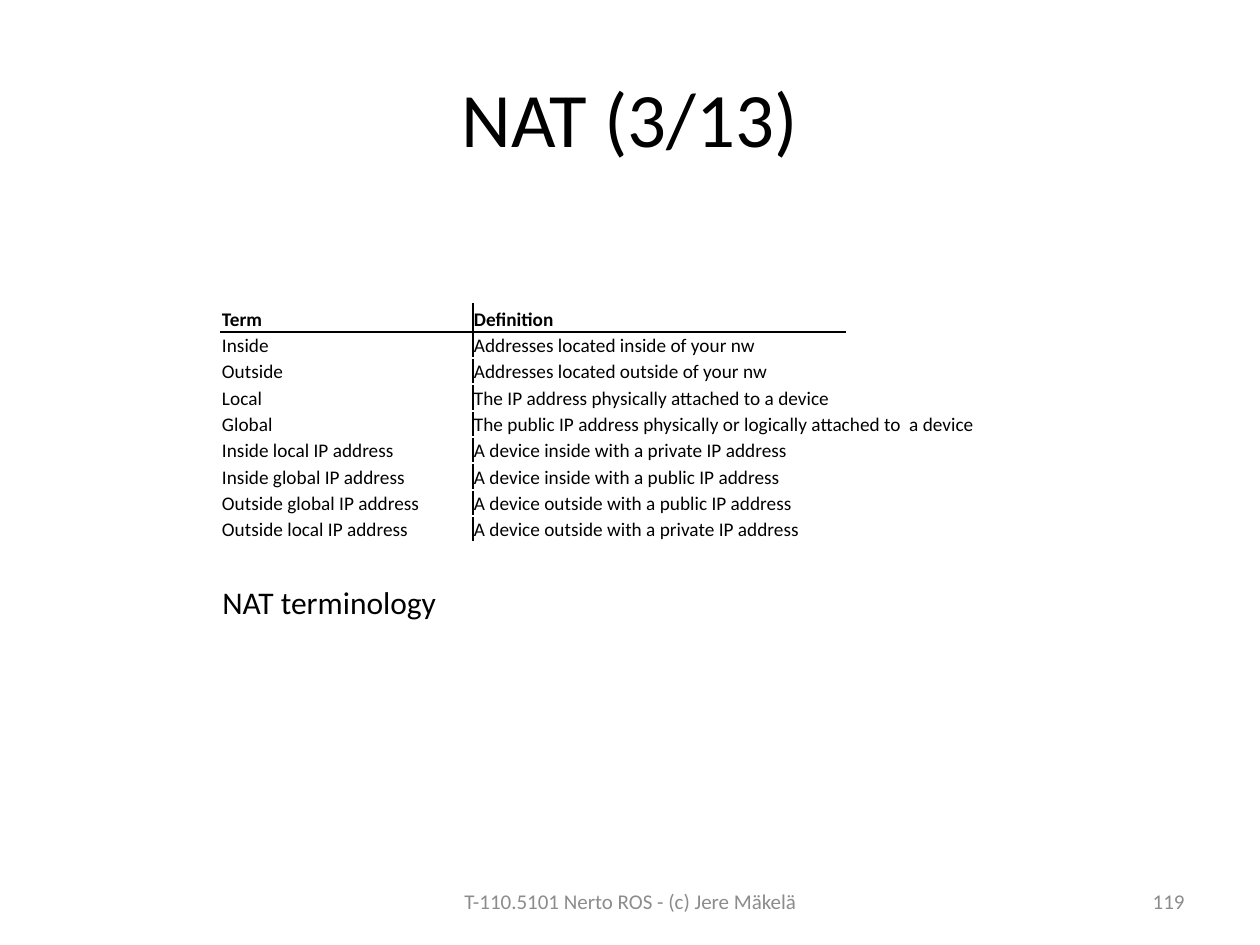
"""Build the NAT terminology slide with its table of terms."""
from dataclasses import dataclass

from lxml import etree
from pptx import Presentation
from pptx.dml.color import RGBColor
from pptx.enum.text import MSO_ANCHOR, MSO_AUTO_SIZE, PP_ALIGN
from pptx.oxml.ns import qn
from pptx.util import Pt

LEFT, CENTER, RIGHT = PP_ALIGN.LEFT, PP_ALIGN.CENTER, PP_ALIGN.RIGHT
TOP, MIDDLE, BOTTOM = MSO_ANCHOR.TOP, MSO_ANCHOR.MIDDLE, MSO_ANCHOR.BOTTOM
FIT_SHAPE = MSO_AUTO_SIZE.SHAPE_TO_FIT_TEXT

EMU_PER_PX = 914400 / 126
TITLE_ONLY = 5


@dataclass(frozen=True)
class Theme:
    font: str = "Calibri"
    ink: str = "000000"
    muted: str = "8C8C8C"
    title_size: int = 44
    caption_size: int = 18
    footer_size: int = 12
    table_size: int = 11
    rule_width: int = 1


@dataclass(frozen=True)
class Box:
    left: int
    top: int
    width: int
    height: int


@dataclass(frozen=True)
class Label:
    text: str
    box: Box
    size: int
    color: str
    align: PP_ALIGN = LEFT
    anchor: MSO_ANCHOR = MIDDLE
    wrap: bool = True


@dataclass(frozen=True)
class Entry:
    term: str
    definition: str
    term_span: int = 1
    definition_span: int = 3


THEME = Theme()
TITLE = Label("NAT (3/13)", Box(63, 38, 1134, 157), THEME.title_size, THEME.ink, CENTER)
LABELS = (
    Label("T-110.5101 Nerto ROS - (c) Jere Mäkelä", Box(431, 876, 399, 50),
          THEME.footer_size, THEME.muted, CENTER),
    Label("119", Box(903, 876, 294, 50), THEME.footer_size, THEME.muted, RIGHT),
    Label("NAT terminology", Box(210, 577, 242, 50), THEME.caption_size, THEME.ink,
          anchor=TOP, wrap=False),
)
ENTRIES = (
    Entry("Term", "Definition", definition_span=1),
    Entry("Inside", "Addresses located inside of your nw"),
    Entry("Outside", "Addresses located outside of your nw"),
    Entry("Local", "The IP address physically attached to a device"),
    Entry("Global", "The public IP address physically or logically attached to  a device",
          definition_span=5),
    Entry("Inside local IP address", "A device inside with a private IP address", 3),
    Entry("Inside global IP address", "A device inside with a public IP address", 3),
    Entry("Outside global IP address", "A device outside with a public IP address", 3),
    Entry("Outside local IP address", "A device outside with a private IP address", 3),
)
COLUMN_WIDTHS = (84, 84, 84, 168, 84, 122, 84, 84)
DEFINITION_COLUMN = 3
RULED_COLUMNS = 6
HEADER_HEIGHT = 28
BODY_HEIGHT = 210
TABLE_BOX = Box(221, 304, sum(COLUMN_WIDTHS), HEADER_HEIGHT + BODY_HEIGHT)


def px(length: int) -> int:
    """Turn pixels into EMU."""
    return round(length * EMU_PER_PX)


def place(shape, box: Box) -> None:
    """Move and size a shape."""
    shape.left, shape.top = px(box.left), px(box.top)
    shape.width, shape.height = px(box.width), px(box.height)


def add_text(paragraph, text: str, size: int, color: str, bold: bool = False) -> None:
    """Add one formatted run to a paragraph."""
    run = paragraph.add_run()
    run.text = text
    run.font.name = THEME.font
    run.font.size = Pt(size)
    run.font.bold = bold
    run.font.color.rgb = RGBColor.from_string(color)


def write_label(shape, label: Label) -> None:
    """Place a text shape and fill in its label."""
    place(shape, label.box)
    frame = shape.text_frame
    frame.word_wrap = label.wrap
    frame.auto_size = MSO_AUTO_SIZE.NONE if label.wrap else FIT_SHAPE
    frame.vertical_anchor = label.anchor
    paragraph = frame.paragraphs[0]
    paragraph.alignment = label.align
    add_text(paragraph, label.text, label.size, label.color)


def add_border(cell, side: str) -> None:
    """Draw one cell border, where side is L, R, T or B."""
    properties = cell._tc.get_or_add_tcPr()
    line = etree.SubElement(properties, qn(f"a:ln{side}"), w=str(Pt(THEME.rule_width)))
    fill = etree.SubElement(line, qn("a:solidFill"))
    etree.SubElement(fill, qn("a:srgbClr"), val=THEME.ink)


def format_cell(cell, row: int, column: int, span: int) -> None:
    """Set the margins, borders, fill and empty-line size of a cell."""
    cell.margin_left = cell.margin_right = cell.margin_top = px(1)
    cell.margin_bottom = 0
    cell.vertical_anchor = BOTTOM
    ruled = column < RULED_COLUMNS
    borders = {
        "L": column == DEFINITION_COLUMN,
        "R": column + span == DEFINITION_COLUMN,
        "T": row == 1 and ruled,
        "B": row == 0 and ruled,
    }
    for side, visible in borders.items():
        if visible:
            add_border(cell, side)
    cell.fill.background()
    paragraph = cell.text_frame.paragraphs[0]
    etree.SubElement(paragraph._p, qn("a:endParaRPr"), sz=str(THEME.table_size * 100))


def add_terms_table(slide) -> None:
    """Add the table of NAT terms and definitions."""
    box = TABLE_BOX
    table = slide.shapes.add_table(
        len(ENTRIES), len(COLUMN_WIDTHS),
        px(box.left), px(box.top), px(box.width), px(box.height)).table
    table.first_row = table.horz_banding = False
    for column, width in zip(table.columns, COLUMN_WIDTHS):
        column.width = px(width)
    body_rows = len(ENTRIES) - 1
    edges = [round(index * BODY_HEIGHT / body_rows) for index in range(body_rows + 1)]
    heights = [HEADER_HEIGHT] + [end - start for start, end in zip(edges, edges[1:])]
    for row, (entry, height) in enumerate(zip(ENTRIES, heights)):
        table.rows[row].height = px(height)
        spans = {0: entry.term_span, DEFINITION_COLUMN: entry.definition_span}
        texts = {0: entry.term, DEFINITION_COLUMN: entry.definition}
        for column in range(len(COLUMN_WIDTHS)):
            format_cell(table.cell(row, column), row, column, spans.get(column, 1))
        for column, text in texts.items():
            cell = table.cell(row, column)
            if spans[column] > 1:
                cell.merge(table.cell(row, column + spans[column] - 1))
            add_text(cell.text_frame.paragraphs[0], text, THEME.table_size,
                     THEME.ink, bold=row == 0)


def main() -> None:
    """Build and save the presentation."""
    presentation = Presentation()
    presentation.slide_width, presentation.slide_height = px(1260), px(945)
    slide = presentation.slides.add_slide(presentation.slide_layouts[TITLE_ONLY])
    write_label(slide.shapes.title, TITLE)
    add_terms_table(slide)
    for label in LABELS:
        write_label(slide.shapes.add_textbox(0, 0, 0, 0), label)
    presentation.save("out.pptx")


if __name__ == "__main__":
    main()
